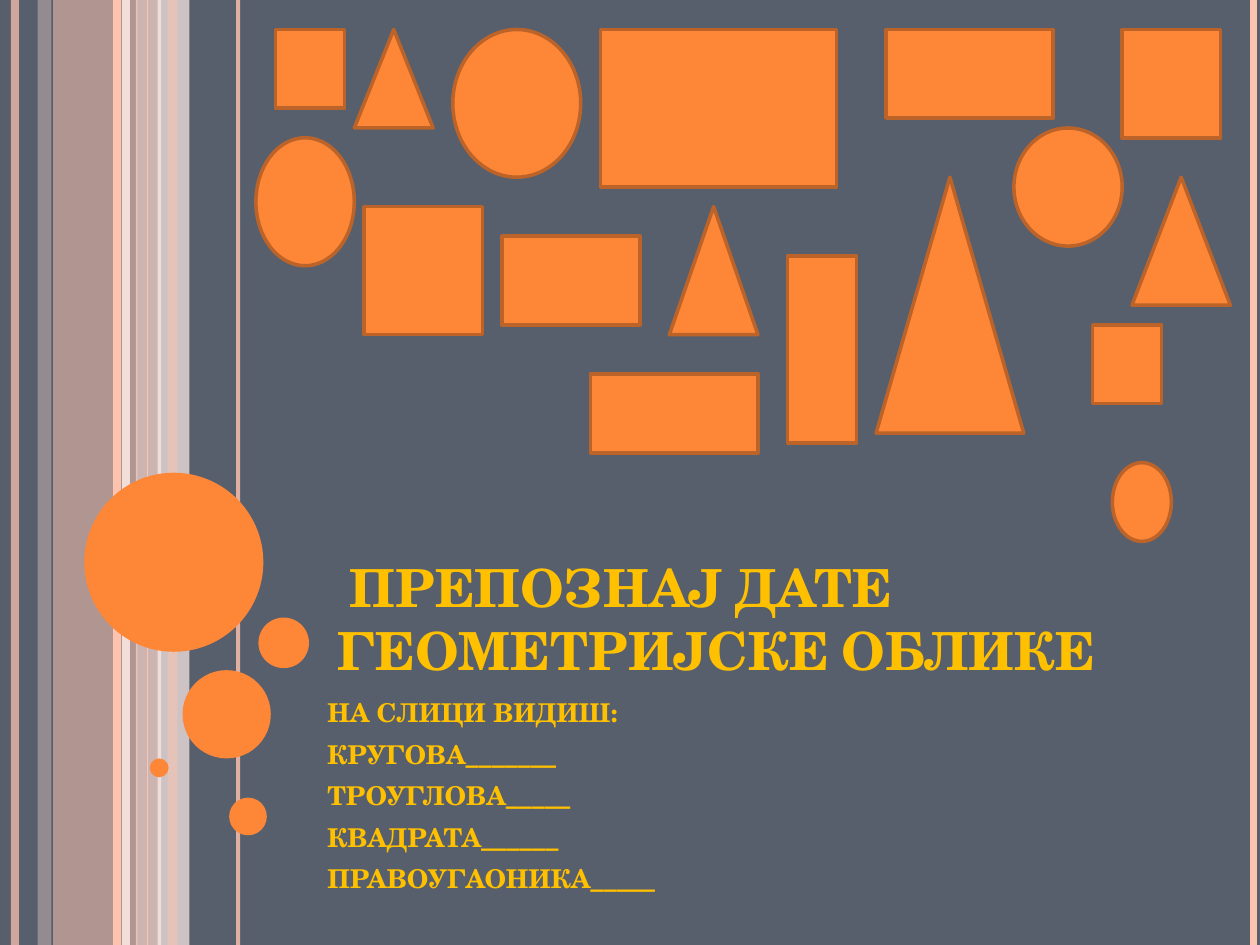
import pptx
import pptx.dml.color
import pptx.enum.dml
import pptx.enum.shapes
import pptx.enum.text
import pptx.oxml
import pptx.oxml.ns
import pptx.util

Cm, Pt = pptx.util.Cm, pptx.util.Pt
Kind = pptx.enum.shapes.MSO_SHAPE
COLORS = {"slate": "575F6D", "peach": "FEC3AE", "pale": "FFD9CE", "cream": "FFEDE8",
          "orange": "FE8637", "rust": "BC6329", "gold": "FFC000", "lemon": "FFF39D"}
WIDTH, HEIGHT = 25.4, 19.05
GRID = WIDTH / 128

BANDS = [(1.07, 1.7, "peach", 54), (0.76, 0.28, "pale", 36),
         (2.74, 0.51, "pale", 70), (3.18, 0.64, "cream", 71)]
STRIPES = [(0.3, "peach", 4.5, 73), (2.54, "cream", 4.5, 83), (2.36, "peach", 4.5, 100),
           (4.8, "peach", 2.25, 82), (2.97, "peach", 0.75, 100), (25.27, "peach", 4.5, 100)]
NARROW_BAND = (3.38, 0.2, "peach", 51)
BUBBLES = [(1.7, 9.53, 3.61), (3.68, 13.51, 1.78), (3.02, 15.29, 0.38),
           (4.62, 16.08, 0.76), (5.21, 12.45, 1.02)]
FIGURES = [
    (Kind.FLOWCHART_PROCESS, [(51, 24, 14, 9), (61, 3, 24, 16)]),
    (Kind.ISOSCELES_TRIANGLE, [(115, 18, 10, 13), (89, 18, 15, 26),
                               (68, 21, 9, 13), (36, 3, 8, 10)]),
    (Kind.OVAL, [(113, 47, 6, 8), (26, 14, 10, 13), (103, 13, 11, 12), (46, 3, 13, 15)]),
    (Kind.RECTANGLE, [(111, 33, 7, 8)]),
    (Kind.FLOWCHART_PROCESS, [(114, 3, 10, 11), (28, 3, 7, 8), (37, 21, 12, 13),
                              (90, 3, 17, 9), (80, 26, 7, 19), (60, 38, 17, 8)]),
]
QUESTIONS = ["НА СЛИЦИ ВИДИШ:", "КРУГОВА_______", "ТРОУГЛОВА_____",
             "КВАДРАТА______", "ПРАВОУГАОНИКА_____"]


def paint(fill, color, opacity=100):
    fill.solid()
    fill.fore_color.rgb = pptx.dml.color.RGBColor.from_string(COLORS[color])
    if opacity < 100:
        tint = fill._xPr.find(".//" + pptx.oxml.ns.qn("a:srgbClr"))
        alpha = pptx.oxml.parse_xml(
            f'<a:alpha {pptx.oxml.ns.nsdecls("a")} val="{opacity * 1000}"/>')
        tint.append(alpha)


def add_text(para, text, size=14.8, color="gold", font="TeX Gyre Schola", small_caps=False):
    span = para.add_run()
    span.text = text
    span.font.name, span.font.size, span.font.bold = font, Pt(size), True
    paint(span.font.fill, color)
    if small_caps:
        span.font._element.set("cap", "small")


class Page:
    def __init__(self, deck):
        self.slide = deck.slides.add_slide(deck.slide_layouts[5])
        self.shapes = self.slide.shapes
        self.outline, self.outline_width = "rust", 2
        paint(self.slide.background.fill, "slate")

    def shape(self, kind, left, top, width, height, color="orange", opacity=100, outlined=False):
        shape = self.shapes.add_shape(kind, Cm(left), Cm(top), Cm(width), Cm(height))
        shape.shadow.inherit = False
        paint(shape.fill, color, opacity)
        if outlined:
            paint(shape.line.fill, self.outline)
            shape.line.width = Pt(self.outline_width)
        else:
            shape.line.fill.background()

    def band(self, left, width, color, opacity):
        self.shape(Kind.RECTANGLE, left, 0, width, HEIGHT, color, opacity)

    def stripe(self, left, color, width, opacity):
        line = self.shapes.add_connector(pptx.enum.shapes.MSO_CONNECTOR.STRAIGHT,
                                         Cm(left), Cm(0), Cm(left), Cm(HEIGHT))
        line.line.width = Pt(width)
        paint(line.line.fill, color, opacity)
        line._element.spPr.append(
            pptx.oxml.parse_xml(f'<a:effectLst {pptx.oxml.ns.nsdecls("a")}/>'))

    def frame(self, box, left, top, width, height, anchor):
        box.left, box.top, box.width, box.height = Cm(left), Cm(top), Cm(width), Cm(height)
        frame = box.text_frame
        frame.word_wrap = True
        frame.auto_size = pptx.enum.text.MSO_AUTO_SIZE.NONE
        frame.vertical_anchor = anchor
        return frame

    def title(self, text):
        frame = self.frame(self.shapes.title, 6.55, 9.53, 17.15, 4.32,
                           pptx.enum.text.MSO_ANCHOR.BOTTOM)
        para = frame.paragraphs[0]
        para.alignment = pptx.enum.text.PP_ALIGN.LEFT
        add_text(para, " ", size=30, color="lemon", small_caps=True)
        add_text(para, text, size=30, small_caps=True)

    def questions(self, lines):
        box = self.shapes.add_textbox(0, 0, 0, 0)
        frame = self.frame(box, 6.35, 13.92, 17.15, 3.81, pptx.enum.text.MSO_ANCHOR.TOP)
        for index, text in enumerate(lines):
            para = frame.add_paragraph() if index else frame.paragraphs[0]
            para.space_before = Pt(6)
            add_text(para, text)


def main():
    deck = pptx.Presentation()
    deck.slide_width, deck.slide_height = Cm(WIDTH), Cm(HEIGHT)
    page = Page(deck)
    for band in BANDS:
        page.band(*band)
    for stripe in STRIPES:
        page.stripe(*stripe)
    page.band(*NARROW_BAND)
    for left, top, size in BUBBLES:
        page.shape(Kind.OVAL, left, top, size, size)
    page.title("ПРЕПОЗНАЈ ДАТЕ ГЕОМЕТРИЈСКЕ ОБЛИКЕ")
    page.questions(QUESTIONS)
    for kind, places in FIGURES:
        for place in places:
            page.shape(kind, *(GRID * step for step in place), outlined=True)
    deck.save("out.pptx")


if __name__ == "__main__":
    main()
